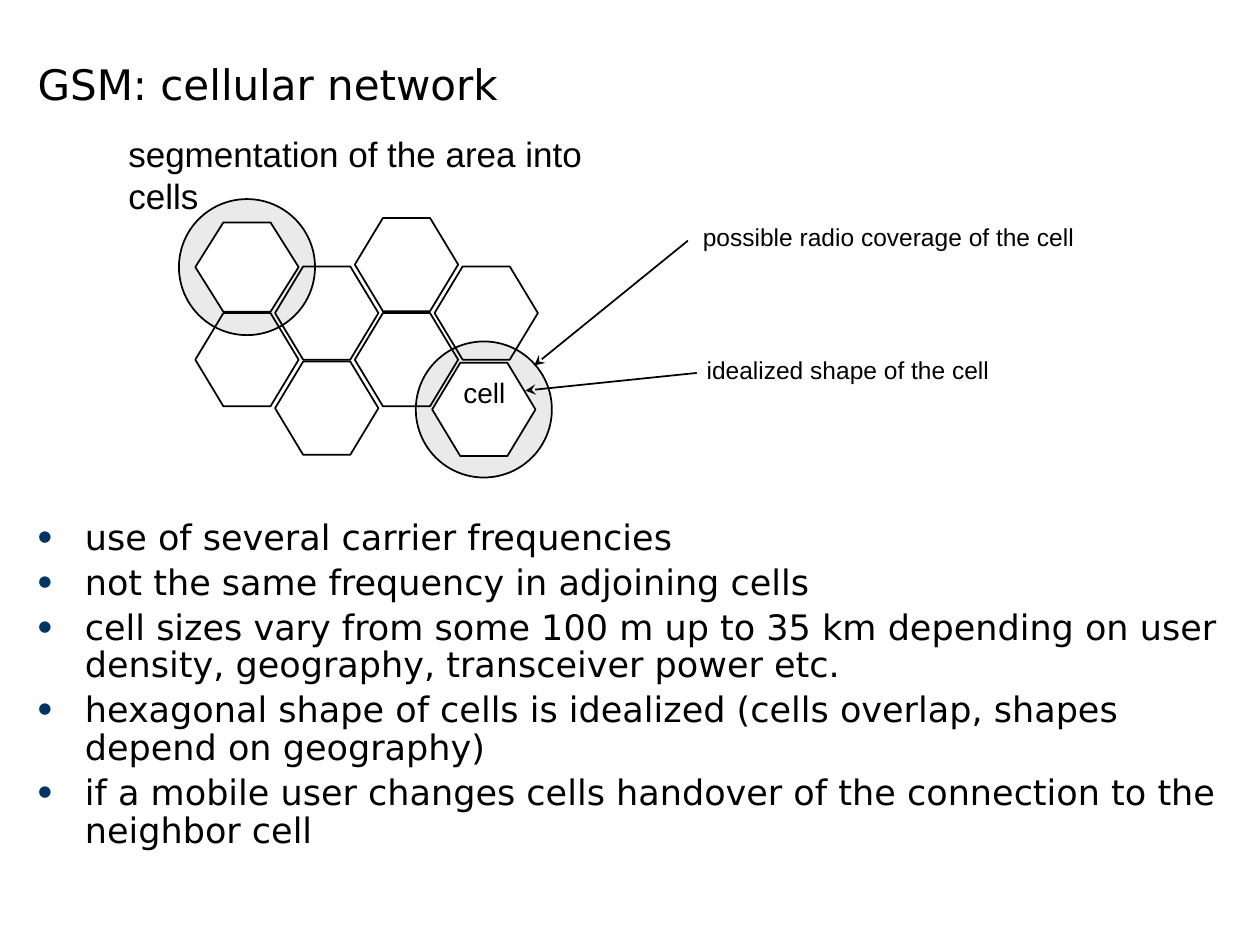
import pptx
import pptx.dml.color
import pptx.enum.shapes
import pptx.enum.text
import pptx.oxml
import pptx.oxml.ns
import pptx.util

Shape = pptx.enum.shapes.MSO_SHAPE
Anchor = pptx.enum.text.MSO_ANCHOR
Align = pptx.enum.text.PP_ALIGN
Pt = pptx.util.Pt

# The slide is a grid of 100 columns by 75 rows.
COLS, ROWS = 100, 75
UNIT = pptx.util.Inches(0.1)

HEX_W, HEX_H, SLANT = 8.2, 7.4, 2.23
STEP_X, STEP_Y, DROP = 6.33, 7.55, 3.85
LEFT, TOP = 15.5, 17.3
RANGE = 10.8

# Column and row of each free cell; odd columns sit lower by DROP.
CELLS = [(1, 0), (0, 1), (2, 0), (2, 1), (3, 0), (1, 1)]
POINTS = [
    "use of several carrier frequencies",
    "not the same frequency in adjoining cells",
    "cell sizes vary from some 100 m up to 35 km depending on user "
    "density, geography, transceiver power etc.",
    "hexagonal shape of cells is idealized (cells overlap, shapes "
    "depend on geography)",
    "if a mobile user changes cells handover of the connection to the "
    "neighbor cell",
]


def grid(*vals):
    return [round(v * UNIT) for v in vals]


def rgb(code):
    return pptx.dml.color.RGBColor.from_string(code)


def apply(obj, form):
    for key, val in form.items():
        setattr(obj, key, val)


def add_xml(node, body):
    """Append a DrawingML element, given without its namespace."""
    tag, rest = (body + " ").split(" ", 1)
    decl = pptx.oxml.ns.nsdecls("a")
    node.append(pptx.oxml.parse_xml(f"<a:{tag} {decl} {rest}/>"))


def add_text(slide, box, lines, size, face="Arial", frame=None, para=None,
             dots=False):
    text = slide.shapes.add_textbox(*grid(*box)).text_frame
    apply(text, {"word_wrap": True, **(frame or {})})
    for i, line in enumerate(lines):
        par = text.paragraphs[0] if i == 0 else text.add_paragraph()
        par.text = line
        apply(par, para or {})
        if i:
            par.space_before = Pt(size * 0.2)
        if dots:
            add_dot(par)
        apply(par.font, {"size": Pt(size), "name": face})
        par.font.color.rgb = rgb("000000")


def add_dot(par):
    props = par._p.get_or_add_pPr()
    hang = grid(3.75)[0]
    props.set("marL", str(hang))
    props.set("indent", str(-hang))
    add_xml(props, "buClr")
    add_xml(props[-1], 'srgbClr val="003366"')
    add_xml(props, 'buSzPct val="120000"')
    add_xml(props, 'buFont typeface="Arial"')
    add_xml(props, 'buChar char="•"')


def add_form(slide, kind, box, fill=None):
    form = slide.shapes.add_shape(kind, *grid(*box))
    form.shadow.inherit = False
    if fill:
        form.fill.solid()
        form.fill.fore_color.rgb = rgb(fill)
    else:
        form.fill.background()
    form.line.color.rgb = rgb("000000")
    form.line.width = Pt(1)
    return form


def add_cell(slide, left, top, high=HEX_H, fill=None):
    box = left, top, HEX_W, high
    cell = add_form(slide, Shape.HEXAGON, box, fill)
    cell.adjustments[0] = SLANT / high


def add_range(slide, x, y, high):
    """Draw a filled cell inside its radio range, both centred on x, y."""
    half = RANGE / 2
    add_form(slide, Shape.OVAL, (x - half, y - half, RANGE, RANGE), "EAEAEA")
    add_cell(slide, x - HEX_W / 2, y - high / 2, high, "FFFFFF")


def add_arrow(slide, *ends):
    kind = pptx.enum.shapes.MSO_CONNECTOR.STRAIGHT
    arrow = slide.shapes.add_connector(kind, *grid(*ends))
    arrow.line.color.rgb = rgb("000000")
    arrow.line.width = Pt(1)
    add_xml(arrow.line._get_or_add_ln(), 'tailEnd type="stealth"')
    add_xml(arrow._element.spPr, "effectLst")


def main():
    deck = pptx.Presentation()
    apply(deck, {"slide_width": COLS * UNIT, "slide_height": ROWS * UNIT})
    slide = deck.slides.add_slide(deck.slide_layouts[6])

    add_text(slide, (54.8, 17.1, 38.1, 3.3),
             ["possible radio coverage of the cell"], 14)
    add_text(slide, (55.1, 27.7, 42, 3.3),
             ["idealized shape of the cell"], 14)

    add_range(slide, 38.4, 32.5, HEX_H)
    add_text(slide, (34.8, 29.3, 7.3, 3.7), ["cell"], 16,
             para={"alignment": Align.CENTER})
    add_range(slide, 19.6, 21.2, 7.1)
    for col, row in CELLS:
        add_cell(slide, LEFT + col * STEP_X,
                 TOP + row * STEP_Y + col % 2 * DROP)
    add_arrow(slide, 54.6, 19.1, 42.4, 29)
    add_arrow(slide, 55.3, 29.6, 41.7, 31)

    add_text(slide, (9.2, 10, 44.3, 4.3),
             ["segmentation of the area into cells"], 20)
    add_text(slide, (2, 0, 66.1, 9.1), ["GSM: cellular network"], 24,
             "DejaVu Sans", {"vertical_anchor": Anchor.BOTTOM})
    add_text(slide, (2, 40.8, 96.1, 28.4), POINTS, 20, "DejaVu Sans",
             para={"line_spacing": 0.9}, dots=True)
    deck.save("out.pptx")


if __name__ == "__main__":
    main()
